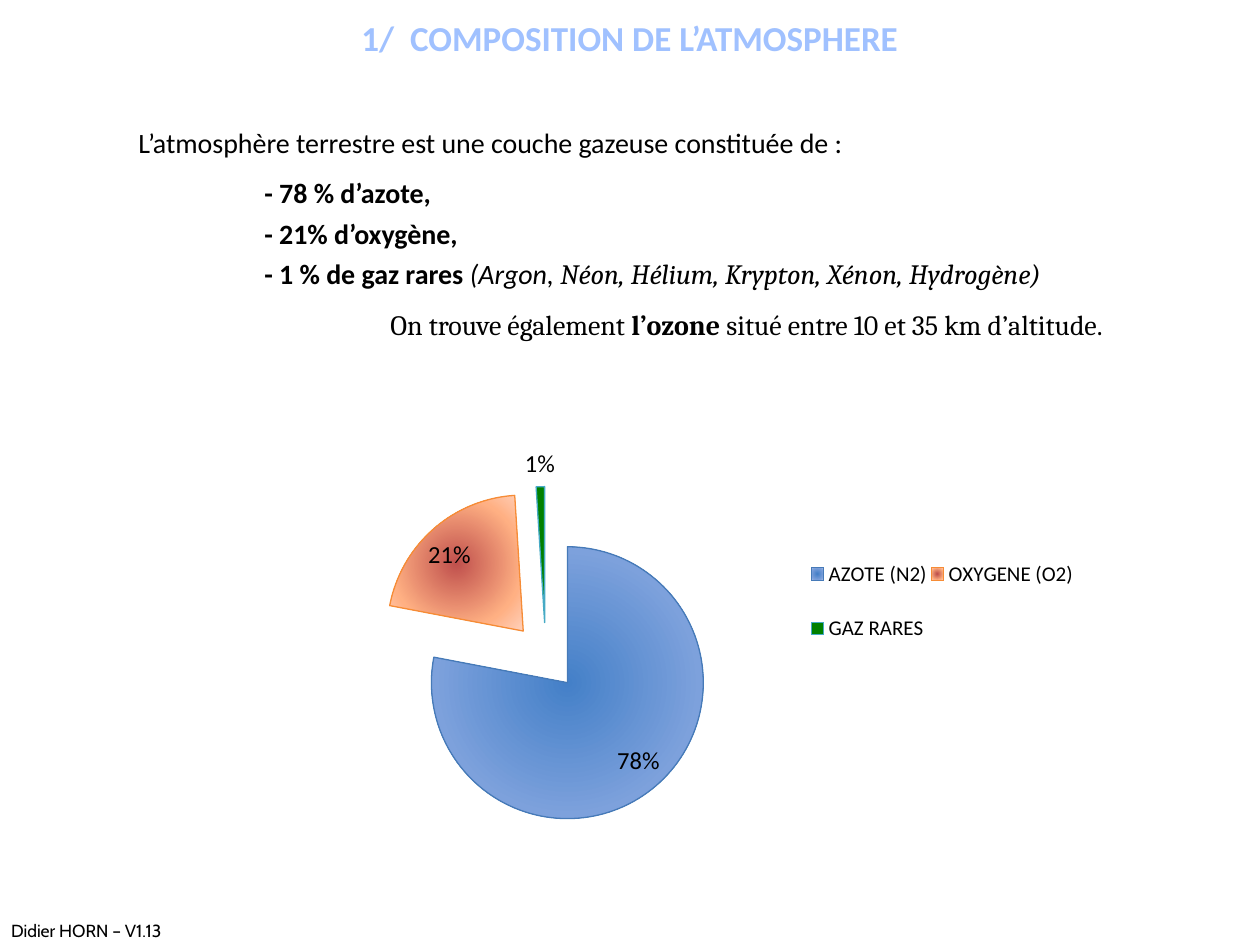
from lxml import etree
from pptx import Presentation
from pptx.chart.data import CategoryChartData as Data
from pptx.dml.color import RGBColor as RGB
from pptx.enum.chart import XL_CHART_TYPE as Kind, XL_LABEL_POSITION as Spot
from pptx.enum.chart import XL_LEGEND_POSITION as Side
from pptx.enum.text import MSO_ANCHOR as Anchor, PP_ALIGN as Align
from pptx.oxml import parse_xml
from pptx.oxml.ns import nsdecls, qn
from pptx.util import Inches, Pt

BLACK = RGB(0, 0, 0)
GREEN = RGB(0x00, 0x80, 0x00)
EDGE = RGB(0x46, 0x7A, 0xB8)
EDGES = [EDGE, RGB(0xF6, 0x8C, 0x36), RGB(0x46, 0xAA, 0xC5)]
SHADES = [
    [(0, RGB(0x44, 0x80, 0xC8)), (69, RGB(0x7D, 0xA1, 0xDC)),
     (100, RGB(0xBA, 0xCA, 0xE9))],
    [(0, RGB(0xC0, 0x50, 0x4D)), (69, RGB(0xFF, 0xB0, 0x83)),
     (100, RGB(0xFF, 0xD2, 0xBD))],
]
PALE, SKY = RGB(0xBF, 0xD3, 0xF9), RGB(0xA0, 0xC1, 0xFF)
GLOW = [(0, PALE), (9, SKY), (50, RGB(0x00, 0x3D, 0x85)), (79, SKY),
        (100, PALE)]

deck = Presentation()
deck.slide_width, deck.slide_height = Inches(10), Inches(7.5)
COL, ROW = deck.slide_width // 1000, deck.slide_height // 750
slide = deck.slides.add_slide(deck.slide_layouts[5])


def write(para, text, size=16, font="Calibri", bold=False, italic=False,
          color=BLACK):
    """Add text to a paragraph, with a line break at each newline."""
    for i, line in enumerate(text.split("\n")):
        if i:
            para.add_line_break()
        run = para.add_run()
        run.text = line
        face = run.font
        face.size, face.name = Pt(size), font
        face.bold, face.italic = bold, italic
        if color is not None:
            face.color.rgb = color
    return run


def blend(stops, way):
    """Make a gradient fill from (percent, colour) stops."""
    marks = "".join(f'<a:gs pos="{at * 1000}"><a:srgbClr val="{tone}"/></a:gs>'
                    for at, tone in stops)
    return parse_xml(f'<a:gradFill {nsdecls("a")}><a:gsLst>{marks}</a:gsLst>'
                     f'{way}</a:gradFill>')


# Footer
foot = slide.shapes.add_textbox(-COL, 725 * ROW, 150 * COL, 27 * ROW)
foot.text_frame.word_wrap = True
write(foot.text_frame.paragraphs[0], "Didier HORN – V1.13 ©", size=10,
      font="Cabin")

# Pie chart
data = Data(number_format="General")
data.categories = ["AZOTE (N2)", "OXYGENE (O2)", "GAZ RARES"]
data.add_series("Series 1", [78, 21, 1])
chart = slide.shapes.add_chart(Kind.PIE, 140 * COL, 344 * ROW, 715 * COL,
                               325 * ROW, data).chart
chart.has_title = False
chart.font.size, chart.font.name = Pt(18), "Calibri"
chart.font.color.rgb = BLACK
chart.has_legend = True
legend = chart.legend
legend.position, legend.include_in_layout = Side.RIGHT, False
legend.font.size, legend.font.name = Pt(12), "Calibri"

plot = chart.plots[0]
plot.vary_by_categories = True
plot.has_data_labels = True
tags = plot.data_labels
tags.show_percentage, tags.show_value = True, False
tags.number_format, tags.number_format_is_linked = "0%", False
tags.position = Spot.BEST_FIT
tags.font.size, tags.font.name = Pt(14), "Calibri"

pie = plot.series[0]
for i, edge in enumerate(EDGES):
    look = pie.points[i].format
    look.line.color.rgb, look.line.width = edge, Pt(0.75)
pie.points[2].format.fill.solid()
pie.points[2].format.fill.fore_color.rgb = GREEN
ROUND = ('<a:path path="circle"><a:fillToRect l="100000" t="100000" '
         'r="100000" b="100000"/></a:path>')
for slot, stops in zip(plot._element.xpath(".//c:dPt/c:spPr"), SHADES):
    slot.insert(0, blend(stops, ROUND))
for point in plot._element.xpath(".//c:dPt"):
    burst = etree.Element(qn("c:explosion"), val="25")
    point.find(qn("c:spPr")).addprevious(burst)
first = plot._element.xpath(".//c:dPt")[0]
first.addprevious(etree.Element(qn("c:explosion"), val="25"))

# Places of the pie and its legend, as shares of the chart
area = chart._chartSpace.xpath(".//c:plotArea")[0]
for old in area.findall(qn("c:layout")):
    area.remove(old)
spots = [
    (area, 0, '<c:layoutTarget val="inner"/>', (0.22, 0.13, 0.38, 0.83)),
    (legend._element, 1, "", (0.7, 0.24, 0.3, 0.34)),
]
for host, index, aim, (x, y, w, h) in spots:
    host.insert(index, parse_xml(
        f'<c:layout {nsdecls("c")}><c:manualLayout>{aim}'
        '<c:xMode val="edge"/><c:yMode val="edge"/>'
        f'<c:x val="{x}"/><c:y val="{y}"/><c:w val="{w}"/><c:h val="{h}"/>'
        '</c:manualLayout></c:layout>'))

# Title
title = slide.shapes.title
title.left, title.top = 0, 3 * ROW
title.width, title.height = 1000 * COL, 54 * ROW
title.text_frame.vertical_anchor = Anchor.MIDDLE
head = title.text_frame.paragraphs[0]
head.alignment, head.space_after = Align.CENTER, Pt(12)
run = write(head, "1/  COMPOSITION DE L’ATMOSPHERE", size=20, bold=True,
            color=None)
props = run._r.get_or_add_rPr()
props.insert(0, blend(GLOW, '<a:lin ang="5400000" scaled="0"/>'))
props.insert(0, parse_xml(
    f'<a:ln {nsdecls("a")} w="{Pt(0.83)}"><a:solidFill>'
    f'<a:srgbClr val="{EDGE}"/></a:solidFill></a:ln>'))

# Body: each paragraph starts one inch further in
body = slide.shapes.add_textbox(0, 89 * ROW, 1000 * COL, 188 * ROW).text_frame
body.word_wrap = True
texts = [
    [("L’atmosphère terrestre est une couche gazeuse constituée de :", {})],
    [("- 78 % d’azote,\n- 21% d’oxygène,\n- 1 % de gaz rares ",
      dict(bold=True)),
     ("(Argon, ", dict(italic=True)),
     ("Néon, Hélium, Krypton, Xénon, Hydrogène)",
      dict(italic=True, font="Cambria"))],
    [("On trouve également ", dict(font="Cambria")),
     ("l’ozone", dict(font="Cambria", bold=True)),
     (" situé entre 10 et 35 km d’altitude.", dict(font="Cambria"))],
]
for i, parts in enumerate(texts):
    para = body.add_paragraph() if i else body.paragraphs[0]
    para.line_spacing = 1.2
    para._p.get_or_add_pPr().set("marL", str(Inches(i + 1)))
    for text, form in parts:
        write(para, text, **form)
body.paragraphs[0].space_after = Pt(6)
body.paragraphs[2].space_before = Pt(6)

deck.save("out.pptx")
